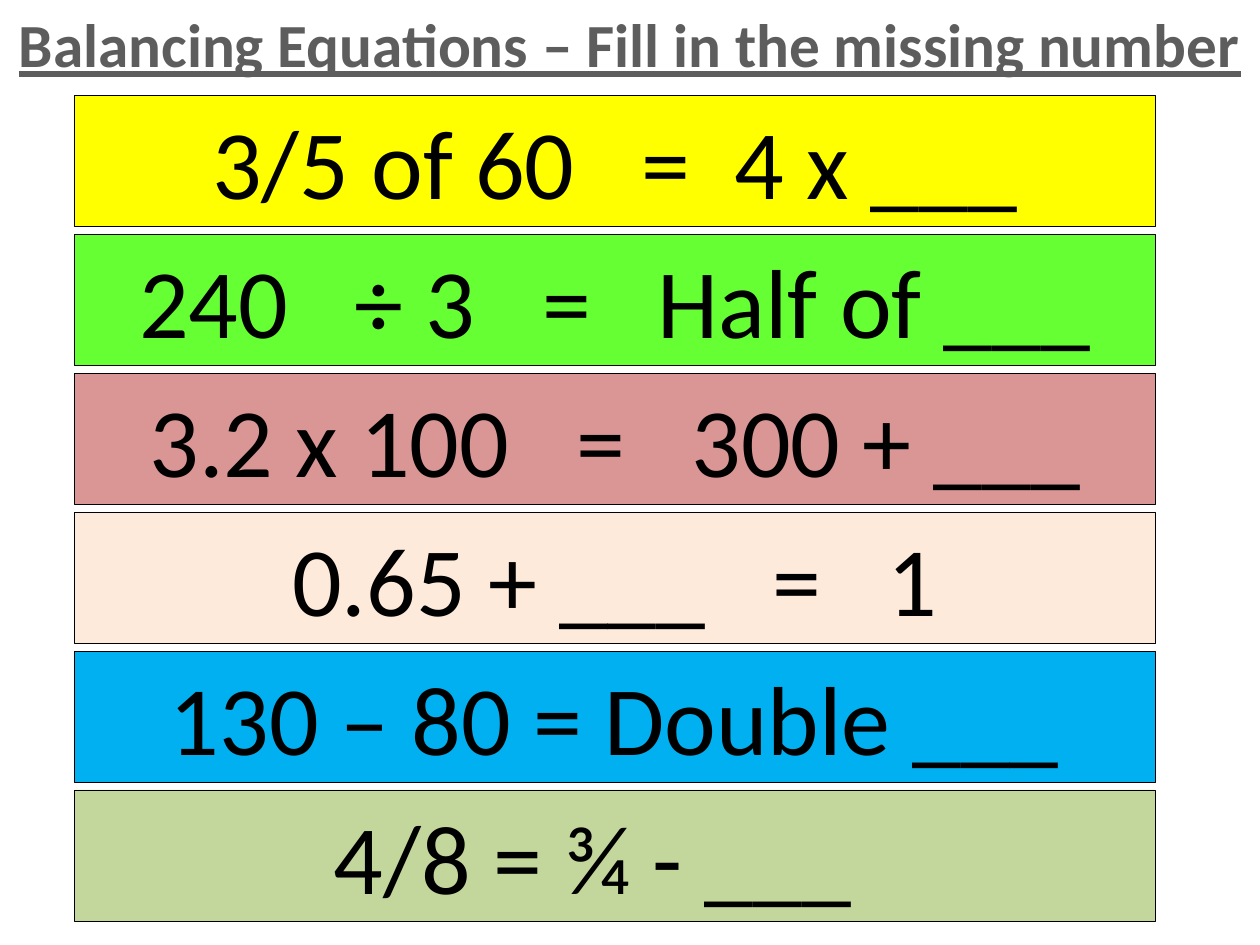
from pptx import Presentation, util as u
from pptx.dml.color import RGBColor
from pptx.enum import shapes, text

COLORS = {
    "ink": "000000", "title": "5D5D5D", "yellow": "FFFF00", "green": "66FF33",
    "rose": "D99694", "peach": "FDEADA", "blue": "00B0F0", "olive": "C3D69B",
}
FONT = "Calibri"
EQUATION_SIZE = 56
SPACE_WIDTH = 0.226 * EQUATION_SIZE

EQUATIONS = [
    ("yellow", [("3/5 of 60", 3), ("=", 2), ("4 x ___", 0)], 0.1),
    ("green", [("240", 3), ("÷ 3", 3), ("=", 3), ("Half of ___", 0)], 0.1),
    ("rose", [("3.2 x 100", 3), ("=", 3), ("300 + ___", 0)], 0.1),
    ("peach", [("0.65 + ___", 3), ("=", 3), ("1", 0)], 0.1),
    ("blue", [("130 – 80 = Double ___", 0)], 0.1),
    ("olive", [("4/8 = ¾ - ___", 0)], 0.45),
]


def color(name):
    """Return the named palette colour."""
    return RGBColor.from_string(COLORS[name])


def add_span(para, words, size, ink):
    """Append a styled run to a paragraph and return it."""
    span = para.add_run()
    span.text = words
    span.font.name = FONT
    span.font.size = u.Pt(size)
    span.font.color.rgb = color(ink)
    return span


def add_title(page, left, top, width, height):
    """Place the underlined heading in the given box."""
    box = page.shapes.add_textbox(left, top, width, height)
    box.text_frame.word_wrap = True
    para = box.text_frame.paragraphs[0]
    para.alignment = text.PP_ALIGN.CENTER
    span = add_span(para, "Balancing Equations – Fill in the missing number", 35, "title")
    span.font.bold = True
    span.font.underline = True


def add_equation(page, fill, pieces, right_inset, left, top, width, height):
    """Place one equation strip, widening the single spaces between its pieces."""
    box = page.shapes.add_shape(shapes.MSO_SHAPE.RECTANGLE, left, top, width, height)
    box.shadow.inherit = False
    box.fill.solid()
    box.fill.fore_color.rgb = color(fill)
    box.line.color.rgb = color("ink")
    box.line.width = u.Pt(0.5)
    frame = box.text_frame
    frame.word_wrap = True
    frame.vertical_anchor = text.MSO_ANCHOR.TOP
    frame.margin_right = u.Inches(right_inset)
    para = frame.paragraphs[0]
    para.alignment = text.PP_ALIGN.CENTER
    for words, gap in pieces:
        add_span(para, words, EQUATION_SIZE, "ink")
        if gap:
            space = add_span(para, " ", EQUATION_SIZE, "ink")
            extra = round((gap - 1) * SPACE_WIDTH * 100)
            space.font._element.set("spc", str(extra))


def add_equations(page, left, top, width, height):
    """Stack the equation strips at an equal pitch in the given box."""
    strip = u.Inches(1.04)
    pitch = (height - strip) / (len(EQUATIONS) - 1)
    for row, (fill, pieces, right_inset) in enumerate(EQUATIONS):
        add_equation(page, fill, pieces, right_inset,
                     left, round(top + row * pitch), width, strip)


def main():
    """Build and save the slide."""
    deck = Presentation()
    deck.slide_width, deck.slide_height = u.Inches(10), u.Inches(7.5)
    page = deck.slides.add_slide(deck.slide_layouts[6])
    add_title(page, 0, 0, deck.slide_width, u.Inches(0.69))
    add_equations(page, u.Inches(0.59), u.Inches(0.76), u.Inches(8.58), u.Inches(6.55))
    deck.save("out.pptx")


if __name__ == "__main__":
    main()
